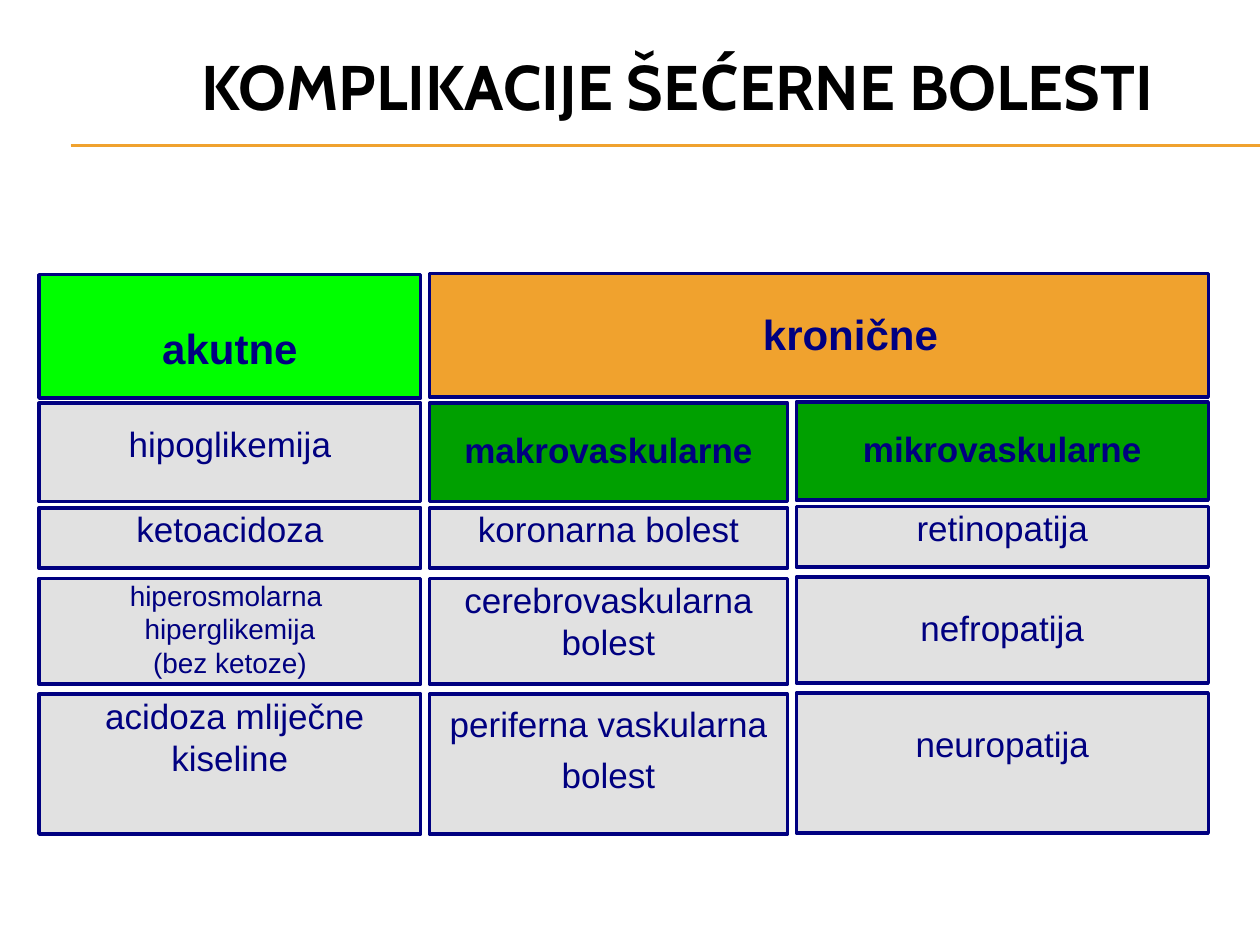
"""Build a slide that charts the acute and chronic complications of diabetes."""
from dataclasses import dataclass
from typing import NamedTuple

from lxml.etree import SubElement
from pptx import Presentation
from pptx.dml.color import RGBColor
from pptx.enum.shapes import MSO_CONNECTOR as CONN, MSO_SHAPE as SHAPE
from pptx.enum.text import MSO_ANCHOR as ANCHOR, PP_ALIGN as ALIGN
from pptx.oxml.ns import qn
from pptx.util import Inches, Pt

NAVY, ORANGE, LIME, GREEN, GREY = "000080", "F0A22E", "00FF00", "00A000", "E1E1E1"


class Track(NamedTuple):
    """Start and size of a grid column or row, in inches."""
    start: float
    size: float


COLS = (Track(0.31, 3.03), Track(3.41, 2.84), Track(6.32, 3.27))
ROWS = (Track(2.18, 0.98), Track(3.2, 0.78), Track(4.03, 0.48),
        Track(4.59, 0.84), Track(5.51, 1.11))
RISE = (0, 0, 0.01)


@dataclass
class Cell:
    """One framed box of the grid and the format of its text."""
    col: int
    row: int
    text: str
    fill: str = GREY
    size: int = 20
    bold: bool = False
    spacing: float = 1.0
    span: int = 1
    left: float = 0
    top: float = 0


CELLS = (
    Cell(0, 0, "akutne", LIME, 24, True, top=0.38),
    Cell(0, 1, "hipoglikemija", top=0.15),
    Cell(0, 2, "ketoacidoza"),
    Cell(0, 3, "hiperosmolarna \nhiperglikemija\n(bez ketoze)", size=16),
    Cell(0, 4, " acidoza mliječne kiseline"),
    Cell(1, 0, "kronične", ORANGE, 24, True, 1.7, span=2, left=0.5),
    Cell(1, 1, "makrovaskularne", GREEN, bold=True, spacing=1.6),
    Cell(1, 2, "koronarna bolest"),
    Cell(1, 3, "cerebrovaskularna bolest"),
    Cell(1, 4, "periferna vaskularna bolest", spacing=1.2),
    Cell(2, 1, "mikrovaskularne", GREEN, bold=True, spacing=1.6),
    Cell(2, 2, "retinopatija"),
    Cell(2, 3, "nefropatija", spacing=1.7),
    Cell(2, 4, "neuropatija", spacing=1.7),
)


def rgb(value: str) -> RGBColor:
    """Turn a hex string into a colour."""
    return RGBColor.from_string(value)


def set_text(tf, text: str, font: dict, color: str, spacing: float = 1.0) -> None:
    """Fill a text frame with centred paragraphs, one per line of text."""
    tf.word_wrap = True
    tf.vertical_anchor = ANCHOR.TOP
    tf.text = text
    for p in tf.paragraphs:
        p.alignment = ALIGN.CENTER
        p.line_spacing = spacing
        p.space_before = Pt(0)
        for name, value in font.items():
            setattr(p.font, name, value)
        p.font.color.rgb = rgb(color)


def add_title(slide, width: int, height: int) -> None:
    """Place and format the slide title."""
    sp = slide.shapes.title
    sp.left, sp.top = int(width * 0.1), int(height * 0.044)
    sp.width, sp.height = int(width * 0.875), int(height * 0.095)
    font = {"name": "Cabin", "size": Pt(36), "bold": True}
    set_text(sp.text_frame, "KOMPLIKACIJE ŠEĆERNE BOLESTI", font, "000000")


def add_rule(slide, y: float, right: int) -> None:
    """Draw a thin line from the left margin to the slide's right edge."""
    line = slide.shapes.add_connector(CONN.STRAIGHT, Inches(0.56), Inches(y), right, Inches(y))
    line.line.color.rgb = rgb(ORANGE)
    line.line.width = Pt(0.75)
    SubElement(line._element.spPr, qn("a:effectLst"))


def add_cell(slide, cell: Cell) -> None:
    """Draw one box at its place in the grid."""
    first, last = COLS[cell.col], COLS[cell.col + cell.span - 1]
    row = ROWS[cell.row]
    box = (first.start, row.start - RISE[cell.col + cell.span - 1],
           last.start + last.size - first.start, row.size)
    sp = slide.shapes.add_shape(SHAPE.RECTANGLE, *map(Inches, box))
    sp.shadow.inherit = False
    sp.fill.solid()
    sp.fill.fore_color.rgb = rgb(cell.fill)
    sp.line.color.rgb = rgb(NAVY)
    sp.line.width = Pt(2)
    tf = sp.text_frame
    margins = {"left": cell.left, "top": cell.top, "right": 0, "bottom": 0}
    for side, inset in margins.items():
        setattr(tf, f"margin_{side}", Inches(inset))
    font = {"name": "Arial", "size": Pt(cell.size), "bold": cell.bold}
    set_text(tf, cell.text, font, NAVY, cell.spacing)


def main() -> None:
    """Build and save the presentation."""
    prs = Presentation()
    prs.slide_width, prs.slide_height = Inches(10), Inches(7.5)
    slide = prs.slides.add_slide(prs.slide_layouts[5])
    for y in (1.15, 1.16):
        add_rule(slide, y, prs.slide_width)
    for cell in CELLS:
        add_cell(slide, cell)
    add_title(slide, prs.slide_width, prs.slide_height)
    prs.save("out.pptx")


if __name__ == "__main__":
    main()
